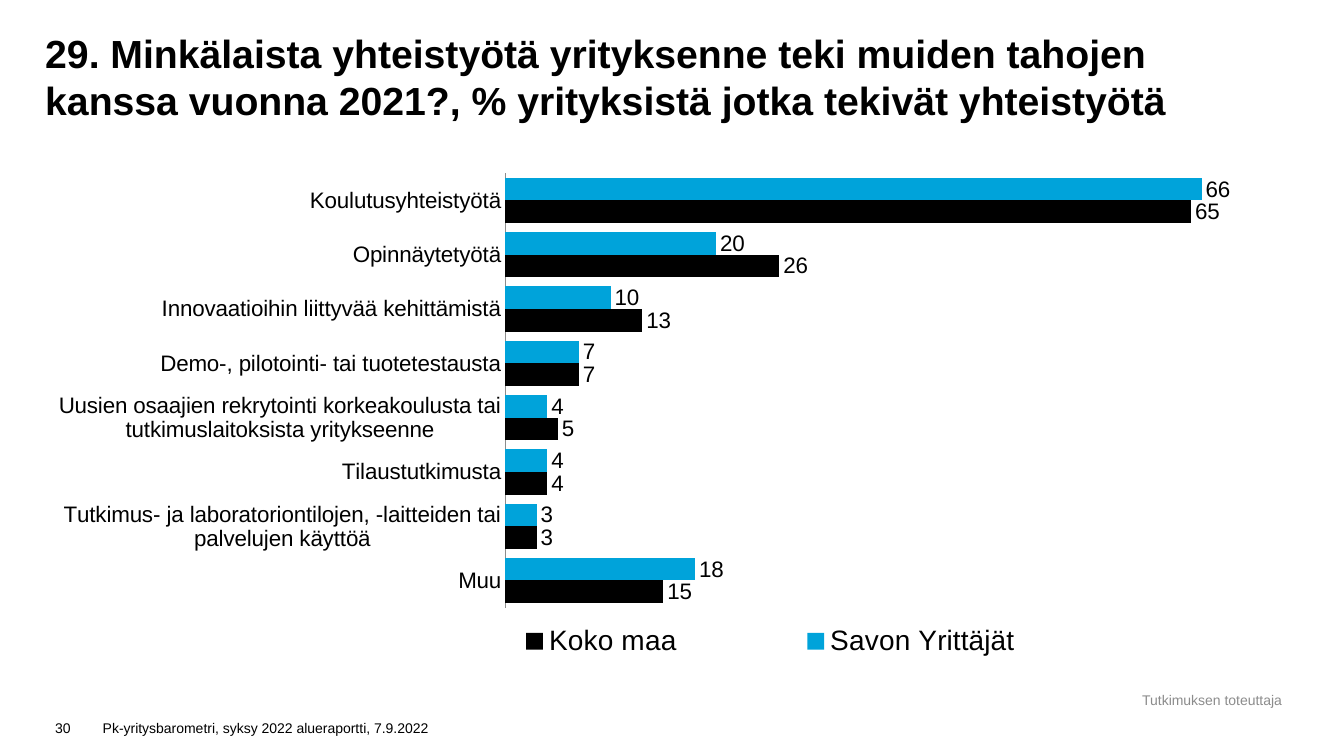
import pptx
import pptx.chart.data
import pptx.dml.color
import pptx.enum.chart
import pptx.enum.text
import pptx.oxml
import pptx.oxml.ns
import pptx.util
from dataclasses import dataclass

Cm = pptx.util.Cm
Pt = pptx.util.Pt
Anchor = pptx.enum.text.MSO_ANCHOR
Align = pptx.enum.text.PP_ALIGN


@dataclass(frozen=True)
class Theme:
    font: str = "Arial"
    black: str = "000000"
    blue: str = "00A3DA"
    grey: str = "8C8C8C"
    title_size: int = 28
    legend_size: int = 20
    label_size: int = 16
    footer_size: int = 10


CATEGORIES = [
    "Koulutusyhteistyötä",
    "Opinnäytetyötä",
    "Innovaatioihin liittyvää kehittämistä",
    "Demo-, pilotointi- tai tuotetestausta",
    "Uusien osaajien rekrytointi korkeakoulusta tai tutkimuslaitoksista yritykseenne",
    "Tilaustutkimusta",
    "Tutkimus- ja laboratoriontilojen, -laitteiden tai palvelujen käyttöä",
    "Muu",
]
SERIES = {
    "Savon Yrittäjät": [66, 20, 10, 7, 4, 4, 3, 18],
    "Koko maa": [65, 26, 13, 7, 5, 4, 3, 15],
}


def color(value):
    return pptx.dml.color.RGBColor.from_string(value)


def style_font(font, theme, size, fill, bold=False):
    font.name = theme.font
    font.size = Pt(size)
    font.bold = bold
    font.color.rgb = color(fill)


def write_text(frame, text, *, theme, size, fill, bold=False,
               align=Align.LEFT, anchor=Anchor.BOTTOM):
    frame.word_wrap = True
    frame.vertical_anchor = anchor
    paragraph = frame.paragraphs[0]
    paragraph.alignment = align
    run = paragraph.add_run()
    run.text = text
    style_font(run.font, theme, size, fill, bold)


def manual_layout(x, y, width, height, inner=False):
    """Return a chart layout element given in fractions of the chart."""
    target = '<c:layoutTarget val="inner"/>' if inner else ""
    modes = '<c:xMode val="edge"/><c:yMode val="edge"/>'
    sizes = "".join(f'<c:{tag} val="{value}"/>'
                    for tag, value in zip("xywh", (x, y, width, height)))
    return pptx.oxml.parse_xml(
        f'<c:layout {pptx.oxml.ns.nsdecls("c")}>'
        f"<c:manualLayout>{target}{modes}{sizes}</c:manualLayout></c:layout>")


def place(element, layout, index):
    for existing in element.findall(pptx.oxml.ns.qn("c:layout")):
        element.remove(existing)
    element.insert(index, layout)


class SlideBuilder:
    def __init__(self, slide, theme):
        self.slide = slide
        self.theme = theme

    def text(self, text, left, top, width, height, inset=None, **text_format):
        shape = self.slide.shapes.add_textbox(Cm(left), Cm(top), Cm(width), Cm(height))
        frame = shape.text_frame
        if inset is not None:
            frame.margin_left = frame.margin_right = Cm(inset)
            frame.margin_top = frame.margin_bottom = Cm(inset)
        text_format = {"size": self.theme.footer_size,
                       "fill": self.theme.black, **text_format}
        write_text(frame, text, theme=self.theme, **text_format)

    def bar_chart(self, categories, series, colors, left, top, width, height):
        theme = self.theme
        data = pptx.chart.data.CategoryChartData(number_format="#,##0")
        data.categories = categories
        for name, values in series.items():
            data.add_series(name, values)
        chart = self.slide.shapes.add_chart(
            pptx.enum.chart.XL_CHART_TYPE.BAR_CLUSTERED,
            Cm(left), Cm(top), Cm(width), Cm(height), data).chart
        chart.has_title = False
        style_font(chart.font, theme, theme.legend_size, theme.black)

        # Axes
        category_axis = chart.category_axis
        category_axis.reverse_order = True
        category_axis.has_major_gridlines = False
        category_axis.major_tick_mark = pptx.enum.chart.XL_TICK_MARK.NONE
        category_axis.format.line.color.rgb = color(theme.grey)
        category_axis.format.line.width = Pt(0.75)
        style_font(category_axis.tick_labels.font, theme, theme.label_size, theme.black)
        value_axis = chart.value_axis
        value_axis.minimum_scale, value_axis.maximum_scale = 0, 70
        value_axis.has_major_gridlines = False
        value_axis.visible = False

        # Bars and their values
        plot = chart.plots[0]
        plot.gap_width, plot.overlap = 40, 0
        plot.vary_by_categories = False
        for bars, fill in zip(plot.series, colors):
            bars.format.fill.solid()
            bars.format.fill.fore_color.rgb = color(fill)
            labels = bars.data_labels
            labels.show_value = True
            labels.number_format = "#,##0"
            labels.number_format_is_linked = False
            labels.position = pptx.enum.chart.XL_LABEL_POSITION.OUTSIDE_END
            style_font(labels.font, theme, theme.label_size, theme.black)

        # Legend below the bars, laid out as a wide row
        chart.has_legend = True
        legend = chart.legend
        legend.position = pptx.enum.chart.XL_LEGEND_POSITION.RIGHT
        legend.include_in_layout = False
        style_font(legend.font, theme, theme.legend_size, theme.black)
        place(legend._element, manual_layout(0.29, 0.89, 0.59, 0.1), 1)
        plot_area = chart._chartSpace.chart.plotArea
        place(plot_area, manual_layout(0.371, 0.033, 0.596, 0.842, inner=True), 0)


def main():
    theme = Theme()
    presentation = pptx.Presentation()
    presentation.slide_width, presentation.slide_height = Cm(33.87), Cm(19.05)
    slide = presentation.slides.add_slide(presentation.slide_layouts[6])
    builder = SlideBuilder(slide, theme)
    margin, content_width = 1.14, 31.24

    # Title
    builder.text("29. Minkälaista yhteistyötä yrityksenne teki muiden tahojen kanssa "
                 "vuonna 2021?, % yrityksistä jotka tekivät yhteistyötä",
                 margin, 0, content_width, 3.1, inset=0,
                 size=theme.title_size, bold=True)

    # Chart
    builder.bar_chart(CATEGORIES, SERIES, (theme.blue, theme.black),
                      margin, 3.94, content_width, 13)

    # Footer
    builder.text("Tutkimuksen toteuttaja", 28.35, 17.32, 4.39, 0.66,
                 fill=theme.grey, align=Align.CENTER, anchor=Anchor.MIDDLE)
    builder.text("30", margin, 17.78, 1.19, 0.89)
    builder.text("Pk-yritysbarometri, syksy 2022 alueraportti, 7.9.2022",
                 2.34, 17.78, 10.59, 0.89)

    presentation.save("out.pptx")


if __name__ == "__main__":
    main()
